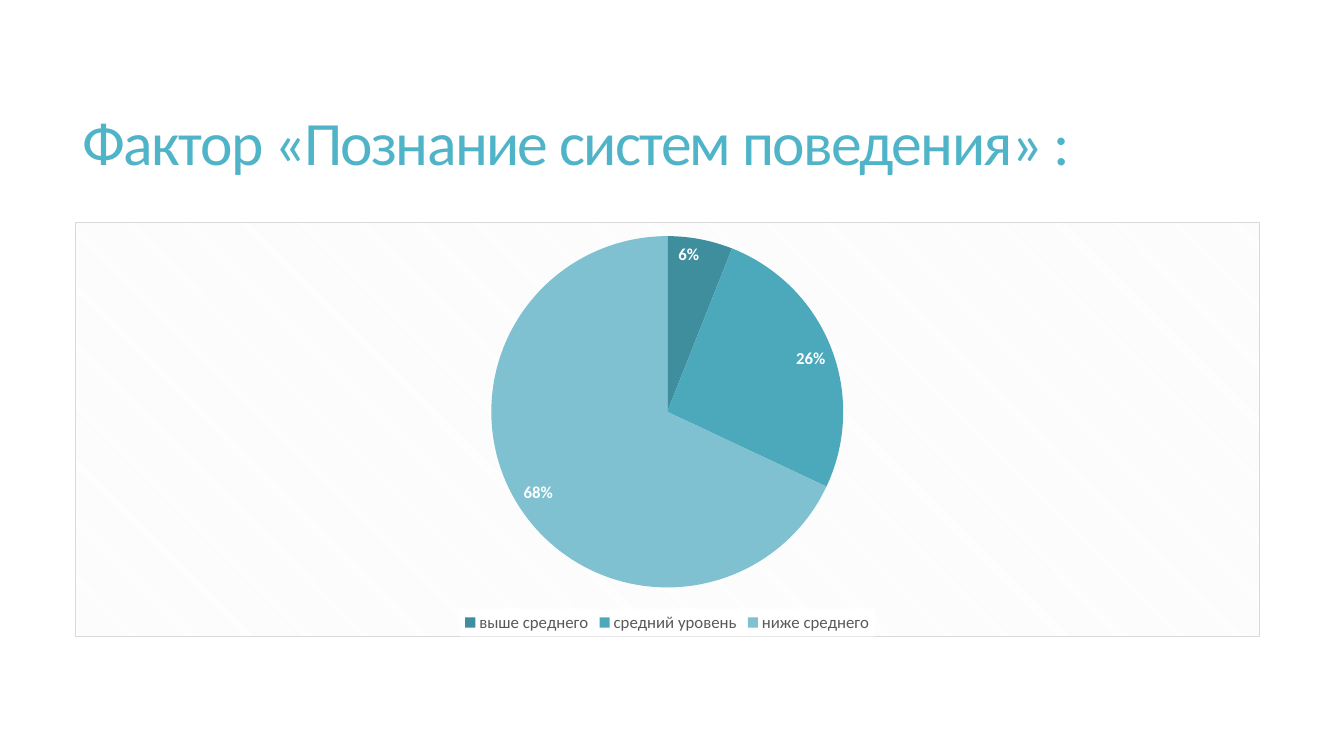
"""Build a slide with a pie chart of knowledge levels for one factor."""
from lxml import etree
from pptx import Presentation
from pptx.chart.data import CategoryChartData
from pptx.dml.color import RGBColor
from pptx.enum import chart as ch, text as tx
from pptx.oxml import ns
from pptx.util import Pt

FONT = "Calibri"
TITLE_TEAL = RGBColor(0x50, 0xB4, 0xC8)
DARK_TEAL = RGBColor(0x3F, 0x8E, 0x9E)
MID_TEAL = RGBColor(0x4B, 0xA9, 0xBB)
LIGHT_TEAL = RGBColor(0x7F, 0xC1, 0xD1)
WHITE = RGBColor(0xFF, 0xFF, 0xFF)
BLACK = RGBColor(0x00, 0x00, 0x00)
GREY = RGBColor(0x59, 0x59, 0x59)
STRIPE = RGBColor(0xF2, 0xF2, 0xF2)
BORDER = RGBColor(0xD9, 0xD9, 0xD9)

HEADING = "Фактор «Познание систем поведения» :"
LEVELS = [
    ("выше среднего", 6, DARK_TEAL),
    ("средний уровень", 26, MID_TEAL),
    ("ниже среднего", 68, LIGHT_TEAL),
]
HEADING_BOX = (51.84, 39.6, 848.16, 130.32)
PIE_BOX = (53.28, 158.4, 846.72, 296.64)


def style(font, size, color, bold=False):
    font.name, font.size, font.bold = FONT, Pt(size), bold
    font.color.rgb = color


def write(frame, content, size, color, line_spacing=1.0, tracking=0):
    frame.word_wrap = True
    frame.vertical_anchor = tx.MSO_ANCHOR.MIDDLE
    paragraph = frame.paragraphs[0]
    paragraph.alignment = tx.PP_ALIGN.LEFT
    paragraph.line_spacing = line_spacing
    run = paragraph.add_run()
    run.text = content
    style(run.font, size, color)
    run._r.get_or_add_rPr().set("spc", str(round(tracking * 100)))


def chart_format(fill, line):
    return etree.fromstring(
        f'<c:spPr {ns.nsdecls("c", "a")}>{fill}{line}</c:spPr>')


def solid(color):
    return f'<a:solidFill><a:srgbClr val="{color}"/></a:solidFill>'


prs = Presentation()
prs.slide_width, prs.slide_height = Pt(960), Pt(540)
slide = prs.slides.add_slide(prs.slide_layouts[5])

heading = slide.shapes.title
heading.left, heading.top, heading.width, heading.height = map(Pt, HEADING_BOX)
write(heading.text_frame, HEADING, 44, TITLE_TEAL,
      line_spacing=0.85, tracking=-1.2)

shares = CategoryChartData()
shares.categories = [name for name, _, _ in LEVELS]
shares.add_series("Series 1", [share for _, share, _ in LEVELS])
pie = slide.shapes.add_chart(
    ch.XL_CHART_TYPE.PIE, *map(Pt, PIE_BOX), shares).chart
style(pie.font, 10, BLACK)
pie.has_title = False

plot = pie.plots[0]
plot.vary_by_categories = True
for index, (_, _, color) in enumerate(LEVELS):
    fill = plot.series[0].points[index].format.fill
    fill.solid()
    fill.fore_color.rgb = color

labels = plot.series[0].data_labels
labels.show_percentage, labels.show_value = True, False
labels.number_format, labels.number_format_is_linked = "0%", False
labels.position = ch.XL_LABEL_POSITION.INSIDE_END
style(labels.font, 12, WHITE, bold=True)

pie.has_legend = True
legend = pie.legend
legend.position = ch.XL_LEGEND_POSITION.BOTTOM
legend.include_in_layout = False
style(legend.font, 12, GREY)
legend._element.find(ns.qn("c:txPr")).addprevious(
    chart_format(solid(WHITE), "<a:ln><a:noFill/></a:ln>"))

stripes = (f'<a:pattFill prst="dkDnDiag">'
           f'<a:fgClr><a:srgbClr val="{STRIPE}"/></a:fgClr>'
           f'<a:bgClr><a:srgbClr val="{WHITE}"/></a:bgClr></a:pattFill>')
outline = f'<a:ln w="{Pt(0.75)}">{solid(BORDER)}</a:ln>'
pie._chartSpace.find(ns.qn("c:chart")).addnext(chart_format(stripes, outline))

prs.save("out.pptx")
